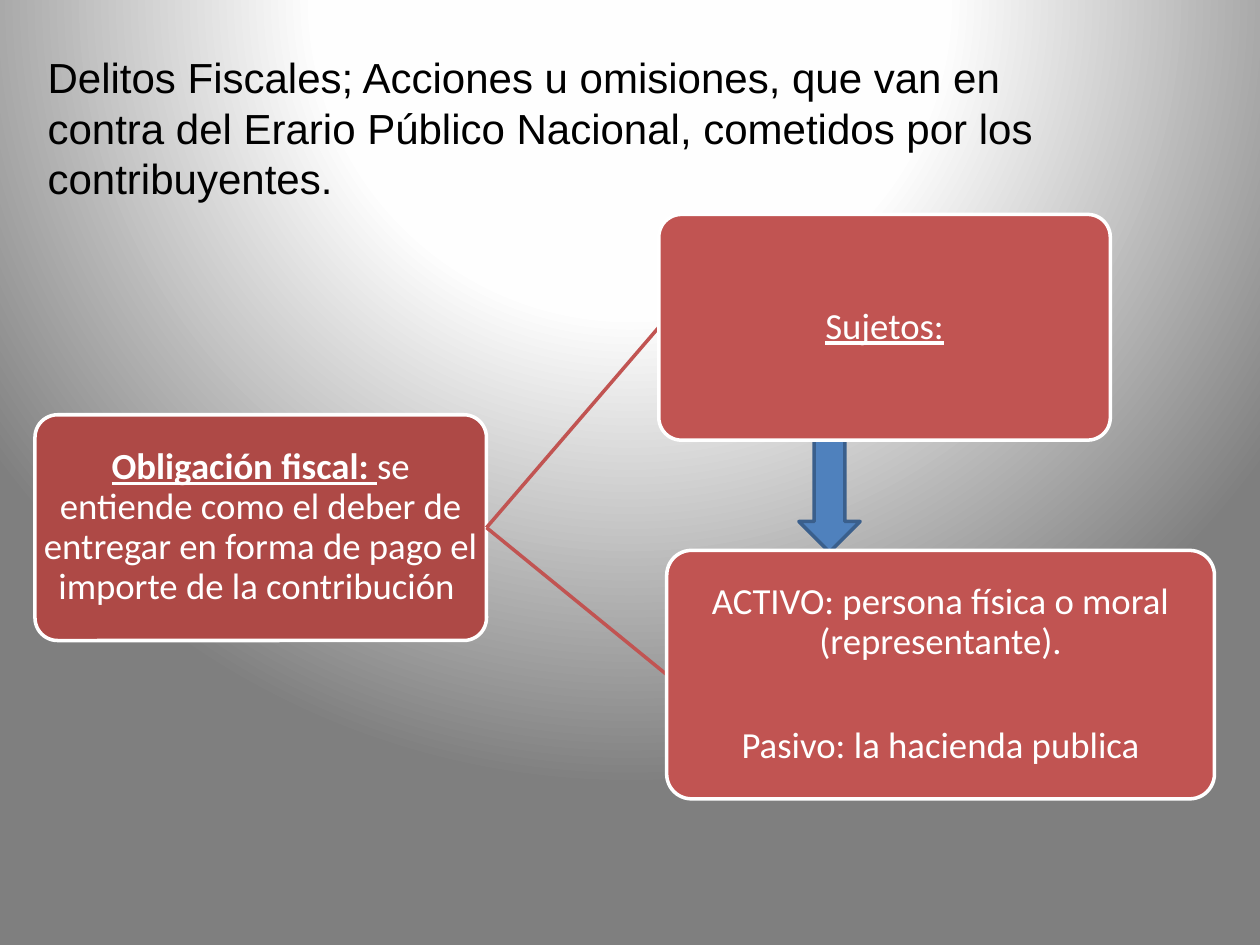
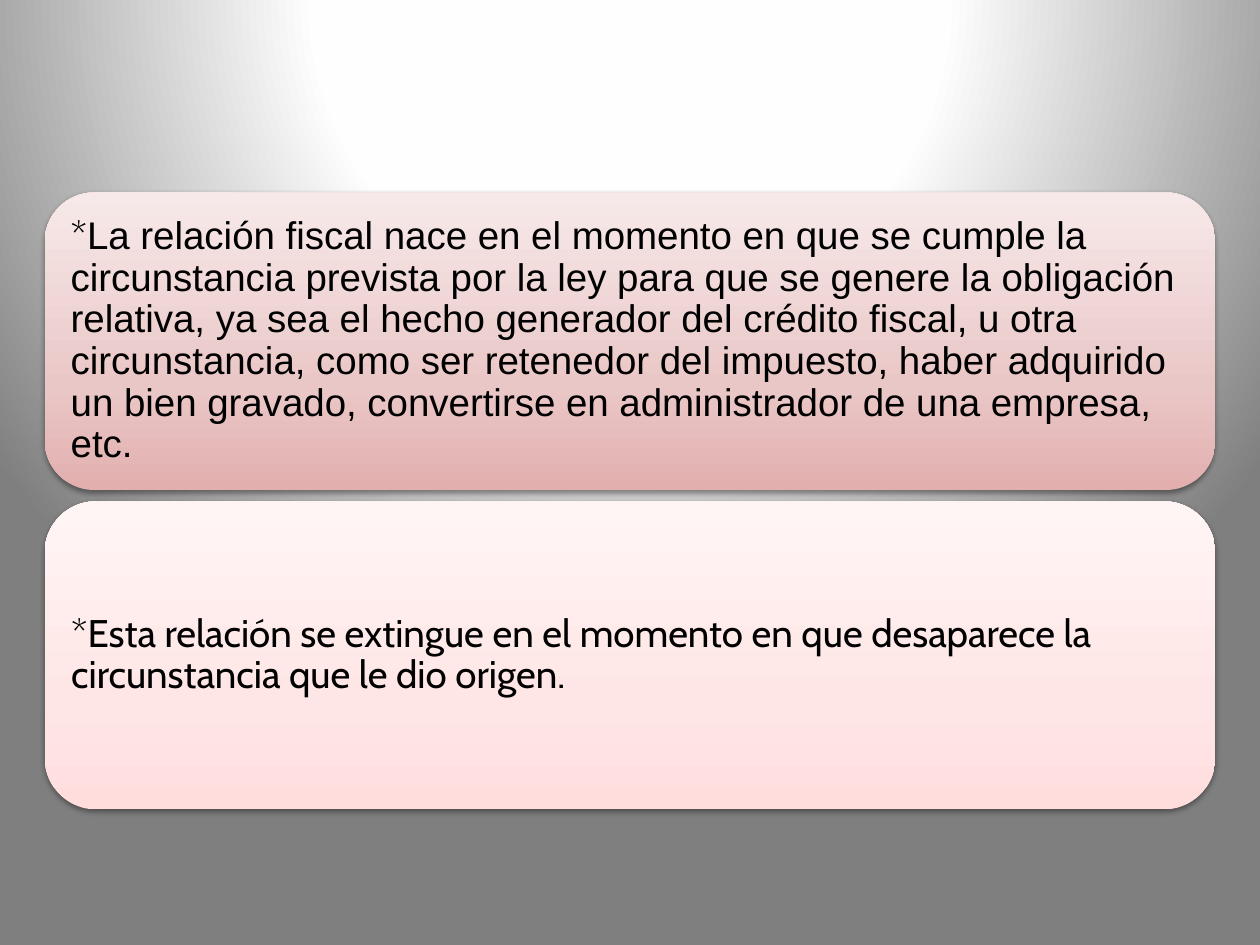
from dataclasses import dataclass

import pptx
import pptx.dml.color
import pptx.enum.shapes
import pptx.enum.text
import pptx.oxml
import pptx.oxml.ns
import pptx.util
from lxml import etree

Pt = pptx.util.Pt
qn = pptx.oxml.ns.qn
Align = pptx.enum.text.PP_ALIGN
Anchor = pptx.enum.text.MSO_ANCHOR
Preset = pptx.enum.shapes.MSO_SHAPE


@dataclass(frozen=True)
class Theme:
    black: str = "000000"
    white: str = "FFFFFF"
    root: str = "AE4946"
    branch: str = "C15452"
    arrow: str = "4F81BD"
    arrow_line: str = "3A5F8C"
    background: tuple = ((0, "FFFFFF"), (40, "FEFEFE"), (100, "7F7F7F"))
    rose: tuple = ((0, "E2AFAE"), (35, "EAC7C7"), (100, "F7E9E9"))
    pink: tuple = ((0, "FFDDDC"), (35, "FFE6E6"), (100, "FFF5F5"))
    title_font: str = "Arial"
    diagram_font: str = "Calibri"
    note_font: str = "Cabin"
    title_size: int = 24
    diagram_size: int = 21
    note_size: int = 22
    line_width: int = 2


THEME = Theme()

# Content: a paragraph is a list of runs
TITLE = ("Delitos Fiscales; Acciones u omisiones, que van en contra del Erario "
         "Público Nacional, cometidos por los contribuyentes.")
TITLE_BOX = (20, 26, 618, 94)

# Diagram runs are (text, bold, underline)
ROOT = {
    "box": (20, 237, 258, 129),
    "paragraphs": [[("Obligación fiscal: ", True, True),
                    ("se entiende como el deber de entregar en forma de pago "
                     "el importe de la contribución ", False, False)]],
}
BRANCHES = [
    {"box": (381, 314.5, 313, 142),
     "paragraphs": [[("ACTIVO: persona física o moral (representante).", False, False)],
                    [("Pasivo: la hacienda publica", False, False)]]},
    {"box": (376.5, 122.5, 258, 129),
     "paragraphs": [[("Sujetos:", False, True)]]},
]
BRANCH_GAP = 37
ARROW_BOX = (456.5, 242, 35, 73.5)

# Note runs are (text, font)
NOTES = [
    {"height": 170, "stops": THEME.rose,
     "runs": [("*", THEME.note_font),
              ("La relación fiscal nace en el momento en que se cumple la "
               "circunstancia prevista por la ley para que se genere la obligación "
               "relativa, ya sea el hecho generador del crédito fiscal, u otra "
               "circunstancia, como ser retenedor del impuesto, haber adquirido un "
               "bien gravado, convertirse en administrador de una empresa, etc.",
               THEME.title_font)]},
    {"height": 176, "stops": THEME.pink,
     "runs": [("*Esta relación se extingue en el momento en que desaparece la "
               "circunstancia que le dio origen.", THEME.note_font)]},
]
NOTE_LEFT, NOTE_TOP, NOTE_WIDTH, NOTE_GAP = 25.5, 110, 669, 6.5


# Shared helpers
def color(value):
    return pptx.dml.color.RGBColor.from_string(value)


def set_gradient(properties, stops, direction):
    """Replace the solid fill of a properties element with a gradient."""
    marks = "".join(f'<a:gs pos="{position * 1000}"><a:srgbClr val="{value}"/></a:gs>'
                    for position, value in stops)
    gradient = pptx.oxml.parse_xml(
        f'<a:gradFill {pptx.oxml.ns.nsdecls("a")} rotWithShape="1">'
        f"<a:gsLst>{marks}</a:gsLst>{direction}</a:gradFill>")
    properties.replace(properties.find(qn("a:solidFill")), gradient)


def place(shape, box):
    shape.left, shape.top, shape.width, shape.height = map(Pt, box)


def add_box(slide, preset, box, fill, line=None):
    shape = slide.shapes.add_shape(preset, *map(Pt, box))
    shape.shadow.inherit = False
    shape.fill.solid()
    shape.fill.fore_color.rgb = color(fill)
    if line:
        shape.line.color.rgb = color(line)
        shape.line.width = Pt(THEME.line_width)
    else:
        shape.line.fill.background()
    return shape


def set_frame(shape, anchor, horizontal, vertical):
    frame = shape.text_frame
    frame.word_wrap = True
    frame.auto_size = pptx.enum.text.MSO_AUTO_SIZE.NONE
    frame.vertical_anchor = anchor
    frame.margin_left = frame.margin_right = Pt(horizontal)
    frame.margin_top = frame.margin_bottom = Pt(vertical)
    return frame


def add_run(paragraph, text, font, size, value, bold=False, underline=False):
    run = paragraph.add_run()
    run.text = text
    run.font.name = font
    run.font.size = Pt(size)
    run.font.color.rgb = color(value)
    run.font.bold = bold
    run.font.underline = underline


# Slide 1: title and branching diagram
def add_node(slide, node, fill):
    shape = add_box(slide, Preset.ROUNDED_RECTANGLE, node["box"], fill, THEME.white)
    shape.adjustments[0] = 0.1
    frame = set_frame(shape, Anchor.MIDDLE, 1, 1)
    for index, runs in enumerate(node["paragraphs"]):
        paragraph = frame.add_paragraph() if index else frame.paragraphs[0]
        paragraph.alignment = Align.CENTER
        paragraph.line_spacing = 0.9
        paragraph.space_before = Pt(BRANCH_GAP if index else 0)
        for text, bold, underline in runs:
            add_run(paragraph, text, THEME.diagram_font, THEME.diagram_size,
                    THEME.white, bold, underline)


def add_link(slide, start, end):
    """Join the right middle of one box to the left middle of another."""
    left, top, width, height = start
    end_left, end_top, _, end_height = end
    link = slide.shapes.add_connector(
        pptx.enum.shapes.MSO_CONNECTOR.STRAIGHT,
        Pt(left + width), Pt(top + height / 2),
        Pt(end_left), Pt(end_top + end_height / 2))
    link.line.color.rgb = color(THEME.branch)
    link.line.width = Pt(THEME.line_width)
    etree.SubElement(link.element.spPr, qn("a:effectLst"))


def build_diagram(presentation):
    slide = presentation.slides.add_slide(presentation.slide_layouts[5])
    title = slide.shapes.title
    place(title, TITLE_BOX)
    paragraph = set_frame(title, Anchor.TOP, 7.2, 3.6).paragraphs[0]
    paragraph.alignment = Align.LEFT
    add_run(paragraph, TITLE, THEME.title_font, THEME.title_size, THEME.black)

    add_box(slide, Preset.DOWN_ARROW, ARROW_BOX, THEME.arrow, THEME.arrow_line)
    add_node(slide, ROOT, THEME.root)
    for branch in BRANCHES:
        add_link(slide, ROOT["box"], branch["box"])
        add_node(slide, branch, THEME.branch)


# Slide 2: stacked notes
def add_shadow(shape):
    effects = shape.element.spPr.find(qn("a:effectLst"))
    effects.append(pptx.oxml.parse_xml(
        f'<a:outerShdw {pptx.oxml.ns.nsdecls("a")} blurRad="{Pt(3.1)}" '
        f'dist="{Pt(1.6)}" dir="5400000" rotWithShape="0">'
        f'<a:srgbClr val="{THEME.black}"><a:alpha val="38000"/></a:srgbClr>'
        "</a:outerShdw>"))


def build_notes(presentation):
    slide = presentation.slides.add_slide(presentation.slide_layouts[6])
    top = NOTE_TOP
    for note in NOTES:
        box = (NOTE_LEFT, top, NOTE_WIDTH, note["height"])
        shape = add_box(slide, Preset.ROUNDED_RECTANGLE, box, THEME.white)
        set_gradient(shape.element.spPr, note["stops"],
                     '<a:lin ang="16200000" scaled="1"/>')
        add_shadow(shape)
        paragraph = set_frame(shape, Anchor.MIDDLE, 6.6, 6.6).paragraphs[0]
        paragraph.alignment = Align.LEFT
        paragraph.line_spacing = 0.9
        for text, font in note["runs"]:
            add_run(paragraph, text, font, THEME.note_size, THEME.black)
        top += note["height"] + NOTE_GAP


def main():
    presentation = pptx.Presentation()
    presentation.slide_width, presentation.slide_height = Pt(720), Pt(540)

    # Shared background on the master
    master = presentation.slide_master
    master.background.fill.solid()
    set_gradient(master.element.find(f".//{qn('p:bgPr')}"), THEME.background,
                 '<a:path path="circle"><a:fillToRect l="50000" t="-80000" '
                 'r="50000" b="180000"/></a:path>')

    build_diagram(presentation)
    build_notes(presentation)
    presentation.save("out.pptx")


if __name__ == "__main__":
    main()
